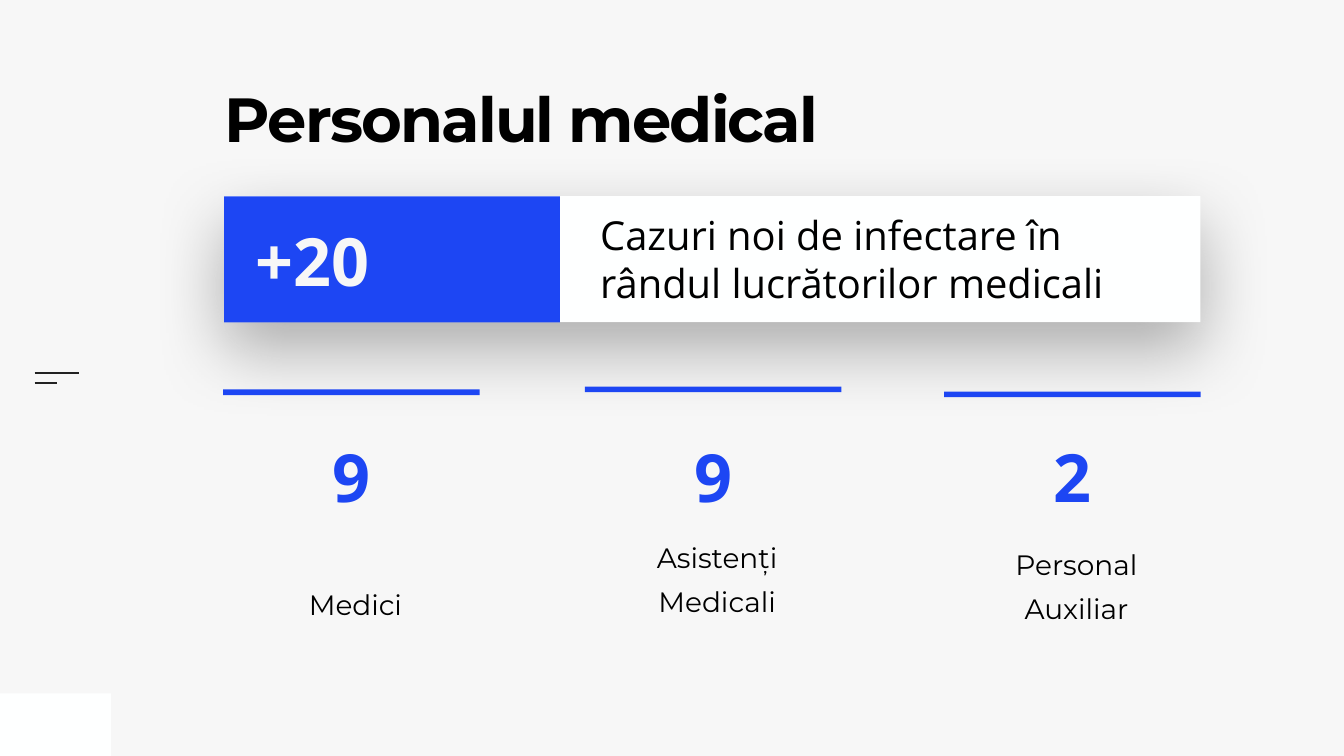
"""Build a slide on new infections among medical staff."""
from lxml.etree import SubElement
from pptx import Presentation
from pptx.dml.color import RGBColor
from pptx.enum.shapes import MSO_CONNECTOR, MSO_SHAPE
from pptx.enum.text import MSO_ANCHOR as Anchor, PP_ALIGN as Align
from pptx.oxml.ns import qn
from pptx.util import Cm, Pt

BLUE = RGBColor(0x1D, 0x46, 0xF3)
BLACK = RGBColor(0, 0, 0)
DARK = RGBColor(0x22, 0x22, 0x22)
WHITE = RGBColor(0xFE, 0xFF, 0xFF)
PALE = RGBColor(0xF7, 0xF7, 0xF7)
HEADING_FONT = "Montserrat"
NUMBER_FONT = "Open Sans"


class SlideBuilder:
    def __init__(self, slide):
        self.slide = slide
        background = slide.background.fill
        background.solid()
        background.fore_color.rgb = PALE

    def rectangle(self, left, top, width, height, color):
        shape = self.slide.shapes.add_shape(
            MSO_SHAPE.RECTANGLE, Cm(left), Cm(top), Cm(width), Cm(height))
        shape.shadow.inherit = False
        shape.fill.solid()
        shape.fill.fore_color.rgb = color
        shape.line.fill.background()
        return shape

    def soft_shadow(self, shape):
        effects = shape._element.spPr.find(qn("a:effectLst"))
        shadow = SubElement(effects, qn("a:outerShdw"), blurRad=str(Pt(100)),
                            dist=str(Pt(40)), dir="5400000", rotWithShape="0")
        color = SubElement(shadow, qn("a:srgbClr"), val=str(BLACK))
        SubElement(color, qn("a:alpha"), val="30000")

    def line(self, left, top, right):
        connector = self.slide.shapes.add_connector(
            MSO_CONNECTOR.STRAIGHT, Cm(left), Cm(top), Cm(right), Cm(top))
        connector.line.color.rgb = DARK
        connector.line.width = Pt(3)
        SubElement(connector._element.spPr, qn("a:effectLst"))

    def fill_text(self, shape, text, size, font=NUMBER_FONT, color=BLACK, bold=False,
                  align=Align.LEFT, anchor=Anchor.MIDDLE, insets=(0.25,) * 4):
        frame = shape.text_frame
        frame.word_wrap = True
        frame.vertical_anchor = anchor
        (frame.margin_left, frame.margin_top,
         frame.margin_right, frame.margin_bottom) = map(Cm, insets)
        paragraph = frame.paragraphs[0]
        paragraph.text = text
        paragraph.alignment = align
        paragraph.font.name = font
        paragraph.font.size = Pt(size)
        paragraph.font.bold = bold
        paragraph.font.color.rgb = color
        return paragraph

    def text(self, left, top, width, height, text, size, **style):
        box = self.slide.shapes.add_textbox(Cm(left), Cm(top), Cm(width), Cm(height))
        return self.fill_text(box, text, size, **style)

    def title(self, text):
        paragraph = self.text(11.33, 4.75, 33.05, 6.93, text, 89, font=HEADING_FONT,
                              bold=True, anchor=Anchor.TOP, insets=(0,) * 4)
        paragraph.line_spacing = 0.8
        paragraph.runs[0]._r.get_or_add_rPr().set("spc", "-270")

    def banner(self, number, text):
        self.soft_shadow(self.rectangle(11.3, 9.88, 49.2, 6.35, WHITE))
        self.text(30, 10.36, 29.87, 5.38, text, 57)
        self.rectangle(11.3, 9.9, 16.92, 6.35, BLUE)
        self.text(12.65, 10.8, 15.32, 4.57, number, 95, color=PALE, bold=True)

    def card(self, left, top, label):
        card = self.rectangle(left, top, 12.93, 13.87, PALE)
        paragraph = self.fill_text(card, label, 40, font=HEADING_FONT,
                                   align=Align.CENTER, anchor=Anchor.BOTTOM,
                                   insets=(1.4, 1.8, 1, 2.21))
        paragraph.line_spacing = 1.3
        paragraph.space_before = Pt(20)

    def count(self, left, rule_top, number):
        self.rectangle(left, rule_top, 12.93, 0.28, BLUE)
        self.text(left, 21.69, 12.93, 4.57, number, 95, color=BLUE, bold=True,
                  align=Align.CENTER)


def main():
    presentation = Presentation()
    presentation.slide_width, presentation.slide_height = Cm(67.74), Cm(38.1)
    builder = SlideBuilder(presentation.slides.add_slide(presentation.slide_layouts[6]))
    builder.rectangle(0, 34.95, 5.59, 3.15, WHITE)
    builder.line(1.75, 18.82, 3.99)
    builder.line(1.75, 19.28, 2.87)

    staff = [
        (11.25, 19.63, 19.63, "9", "Medici"),
        (29.48, 19.48, 19.48, "9", "Asistenți Medicali"),
        (47.59, 19.84, 19.74, "2", "Personal Auxiliar"),
    ]
    for left, card_top, _, _, label in staff:
        builder.card(left, card_top, label)
    builder.title("Personalul medical")
    builder.banner("+20", "Cazuri noi de infectare în rândul lucrătorilor medicali")
    for left, _, rule_top, number, _ in staff:
        builder.count(left, rule_top, number)
    presentation.save("out.pptx")


if __name__ == "__main__":
    main()
